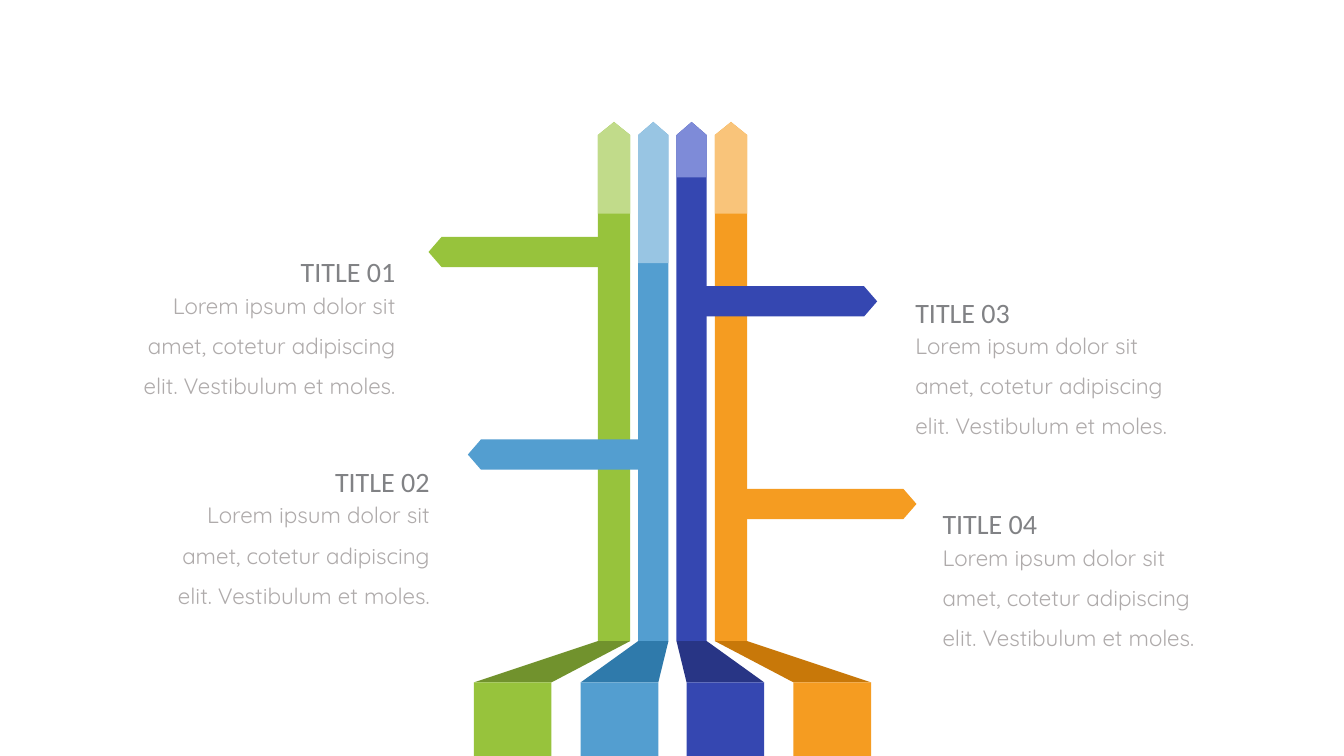
"""Build a slide of four coloured roads, each with a side arrow and a caption."""
from pptx import Presentation
from pptx.dml.color import RGBColor as RGB
from pptx.enum.shapes import MSO_SHAPE as SHAPE
from pptx.enum.text import MSO_ANCHOR as ANCHOR, PP_ALIGN as ALIGN
from pptx.util import Inches, Pt

COLS, ROWS = 1333, 750
COLORS = {
    "green": "97C33C", "green_dark": "71922D", "green_light": "C1DB8A",
    "sky": "539ED0", "sky_dark": "2F7AAB", "sky_light": "98C5E3",
    "navy": "3547B1", "navy_dark": "283585", "navy_light": "7E8BD8",
    "orange": "F59C21", "orange_dark": "C87809", "orange_light": "F9C47A",
    "title": "818285", "body": "AFABAB",
}
BODY = "Lorem ipsum dolor sit amet, cotetur adipiscing elit. Vestibulum et moles."
FORMATS = {
    "title": {"name": "Calibri", "size": Pt(20)},
    "body": {"name": "Quicksand", "size": Pt(16)},
}
MIDDLE, ROAD_PITCH, BLOCK_PITCH = 667, 38.7, 105.7
TIP, SHOULDER, BEND, BLOCK_TOP, BLOCK_W = 121, 134, 636, 677, 77
ARM_W, ARM_H, HEAD = 171, 30, 13
ROADS = [
    ("green", 16, 212, -1, 235, 402, 235),
    ("sky", 15, 261, -1, 436, 436, 443),
    ("navy", 15, 176, 1, 284, 898, 275),
    ("orange", 16, 212, 1, 485, 925, 485),
]

prs = Presentation()
prs.slide_width, prs.slide_height = Inches(13.33), Inches(7.5)
cell = prs.slide_width // COLS
s = prs.slides.add_slide(prs.slide_layouts[6])


def paint(sp, color):
    sp.shadow.inherit = False
    sp.fill.solid()
    sp.fill.fore_color.rgb = RGB.from_string(COLORS[color])
    sp.line.fill.background()


def polygon(shapes, points, color):
    builder = shapes.build_freeform(*points[0], scale=cell)
    builder.add_line_segments(points[1:], close=True)
    paint(builder.convert_to_shape(), color)


for i, (color, half, light_end, *_) in enumerate(ROADS):
    center = round(MIDDLE + (i - 1.5) * ROAD_PITCH)
    left, right = center - half, center + half
    block = round(MIDDLE + (i - 1.5) * BLOCK_PITCH - BLOCK_W / 2)
    shapes = s.shapes.add_group_shape().shapes
    for end, shade in ((BEND, color), (light_end, f"{color}_light")):
        polygon(shapes, [(left, end), (left, SHOULDER), (center, TIP),
                         (right, SHOULDER), (right, end)], shade)
    polygon(shapes, [(right, BEND), (left, BEND), (block, BLOCK_TOP),
                     (block + BLOCK_W, BLOCK_TOP)], f"{color}_dark")
    sp = shapes.add_shape(SHAPE.RECTANGLE, block * cell, BLOCK_TOP * cell,
                          BLOCK_W * cell, (ROWS - BLOCK_TOP) * cell)
    paint(sp, color)

for i, (color, _, _, side, arm_top, text_edge, text_top) in enumerate(ROADS):
    tail = round(MIDDLE + (i - 1.5) * ROAD_PITCH) + side * HEAD
    tip = tail + side * ARM_W
    neck, arm_end = tip - side * HEAD, arm_top + ARM_H
    polygon(s.shapes, [(neck, arm_top), (tail, arm_top), (tail, arm_end),
                       (neck, arm_end), (tip, arm_top + ARM_H // 2)], color)
    captions = (("body", BODY, 41, 286, 120),
                ("title", f"TITLE {i + 1:02d}", 0, 169, 52))
    for kind, text, drop, width, height in captions:
        left = text_edge if side > 0 else text_edge - width
        sp = s.shapes.add_textbox(left * cell, (text_top + drop) * cell,
                                  width * cell, height * cell)
        tf = sp.text_frame
        tf.word_wrap, tf.vertical_anchor = True, ANCHOR.MIDDLE
        p = tf.paragraphs[0]
        p.alignment = ALIGN.LEFT if side > 0 else ALIGN.RIGHT
        p.line_spacing = 1.5
        r = p.add_run()
        r.text = text
        r.font.color.rgb = RGB.from_string(COLORS[kind])
        for name, value in FORMATS[kind].items():
            setattr(r.font, name, value)

prs.save("out.pptx")
